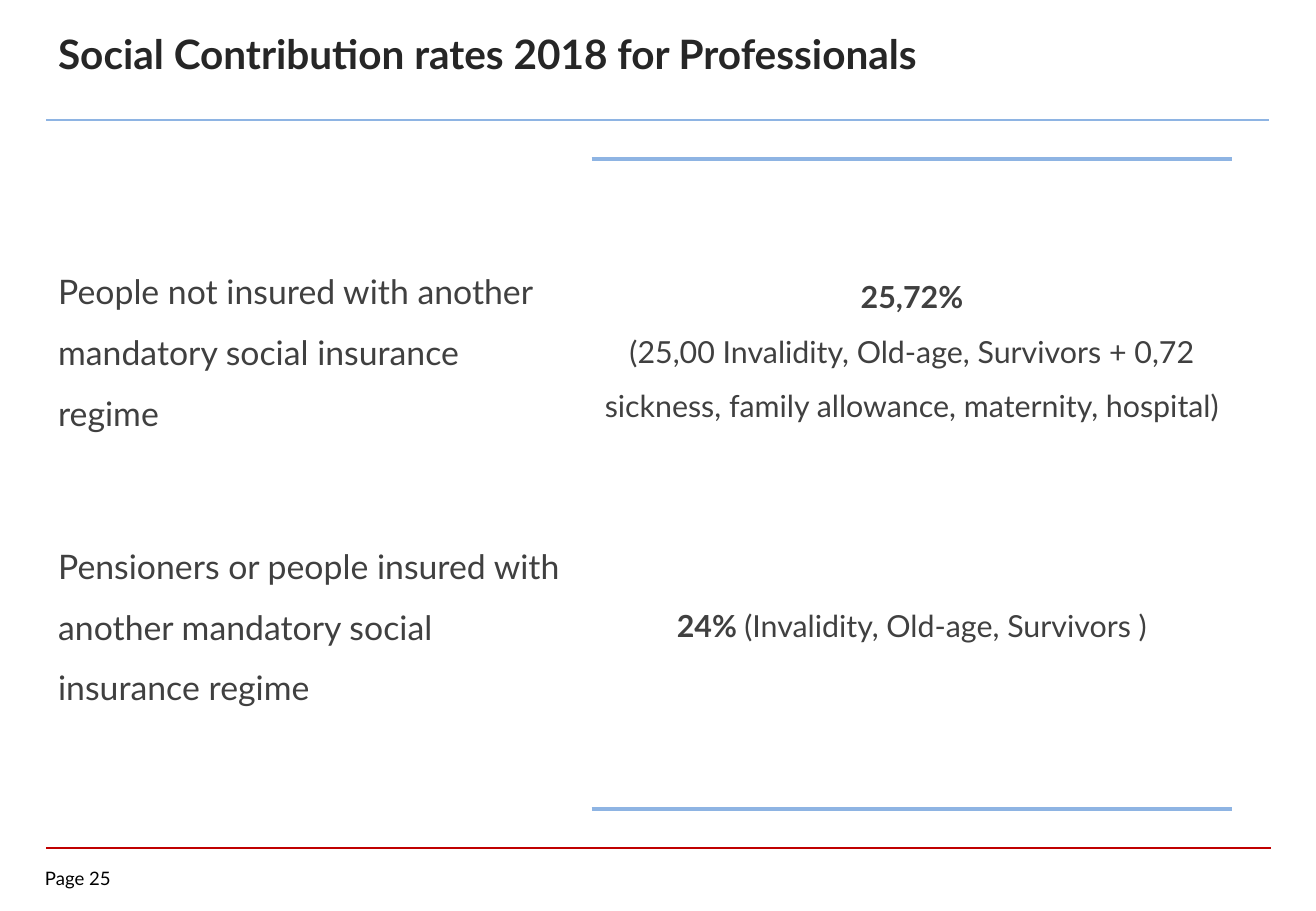
import pptx
import pptx.dml.color
import pptx.enum.shapes
import pptx.enum.text
import pptx.oxml.ns
import pptx.util
from lxml import etree

Inches = pptx.util.Inches
Pt = pptx.util.Pt
ANCHOR = pptx.enum.text.MSO_ANCHOR
ALIGN = pptx.enum.text.PP_ALIGN

COLORS = {"title": "262626", "body": "404040", "page": "000000",
          "blue": "8EB4E3", "red": "C00000"}
FONT = "Lato"
LEFT = 0.38
RATES_LEFT, RATES_RIGHT = 4.87, 10.14
RATES_PADDING = 0.07


def color(name):
    return pptx.dml.color.RGBColor.from_string(COLORS[name])


def add_rule(slide, left, right, top, color_name, width):
    rule = slide.shapes.add_connector(
        pptx.enum.shapes.MSO_CONNECTOR.STRAIGHT,
        Inches(left), Inches(top), Inches(right), Inches(top))
    rule.line.color.rgb = color(color_name)
    rule.line.width = Pt(width)
    etree.SubElement(rule._element.spPr, pptx.oxml.ns.qn("a:effectLst"))


def add_text(slide, box, paragraphs, size, color_name, align=ALIGN.LEFT,
             anchor=ANCHOR.TOP, spacing=1.0, side_inset=0.1, end_inset=0.05):
    """Each paragraph is a list of (text, bold) runs; box is left, top, width, height."""
    shape = slide.shapes.add_textbox(*map(Inches, box))
    frame = shape.text_frame
    frame.word_wrap = True
    frame.vertical_anchor = anchor
    frame.margin_left = frame.margin_right = Inches(side_inset)
    frame.margin_top = frame.margin_bottom = Inches(end_inset)
    for index, runs in enumerate(paragraphs):
        paragraph = frame.add_paragraph() if index else frame.paragraphs[0]
        paragraph.alignment = align
        paragraph.line_spacing = spacing
        paragraph.font.name = FONT
        paragraph.font.size = Pt(size)
        paragraph.font.color.rgb = color(color_name)
        for text, bold in runs:
            run = paragraph.add_run()
            run.text = text
            run.font.bold = bold


def add_header(slide, title):
    add_text(slide, (LEFT, 0.19, 7.56, 0.71), [[(title, True)]], 24, "title")
    add_rule(slide, LEFT, 10.44, 0.99, "blue", 1.5)


def add_footer(slide, page):
    add_rule(slide, LEFT, 10.46, 6.98, "red", 1)
    add_text(slide, (0.37, 7.14, 0.73, 0.22), [[(page, False)]], 11, "page",
             side_inset=0, end_inset=0)


def add_rate_row(slide, top, height, group_width, group, rate):
    """Place an insured group on the left and its rate between the blue rules."""
    add_text(slide, (LEFT, top, group_width, height), [[(group, False)]], 20, "body",
             anchor=ANCHOR.MIDDLE, spacing=1.5)
    rate_width = RATES_RIGHT - RATES_LEFT - 2 * RATES_PADDING
    add_text(slide, (RATES_LEFT + RATES_PADDING, top, rate_width, height), rate, 18, "body",
             align=ALIGN.CENTER, anchor=ANCHOR.MIDDLE, spacing=1.5, side_inset=0)


def add_rates(slide):
    add_rate_row(
        slide, 2.14, 1.35, 4.25,
        "People not insured with another mandatory social insurance regime",
        [[("25,72%", True)],
         [("(25,00 Invalidity, Old-age, Survivors + 0,72 sickness, "
           "family allowance, maternity, hospital)", False)]])
    add_rate_row(
        slide, 4.32, 1.51, 4.48,
        "Pensioners or people insured with another mandatory social insurance regime",
        [[("24% ", True), ("(Invalidity, Old-age, Survivors )", False)]])
    for top in (1.31, 6.66):
        add_rule(slide, RATES_LEFT, RATES_RIGHT, top, "blue", 2.25)


def main():
    presentation = pptx.Presentation()
    presentation.slide_width = Inches(10.83)
    presentation.slide_height = Inches(7.5)
    slide = presentation.slides.add_slide(presentation.slide_layouts[6])
    add_footer(slide, "Page 25")
    add_header(slide, "Social Contribution rates 2018 for Professionals")
    add_rates(slide)
    presentation.save("out.pptx")


if __name__ == "__main__":
    main()
